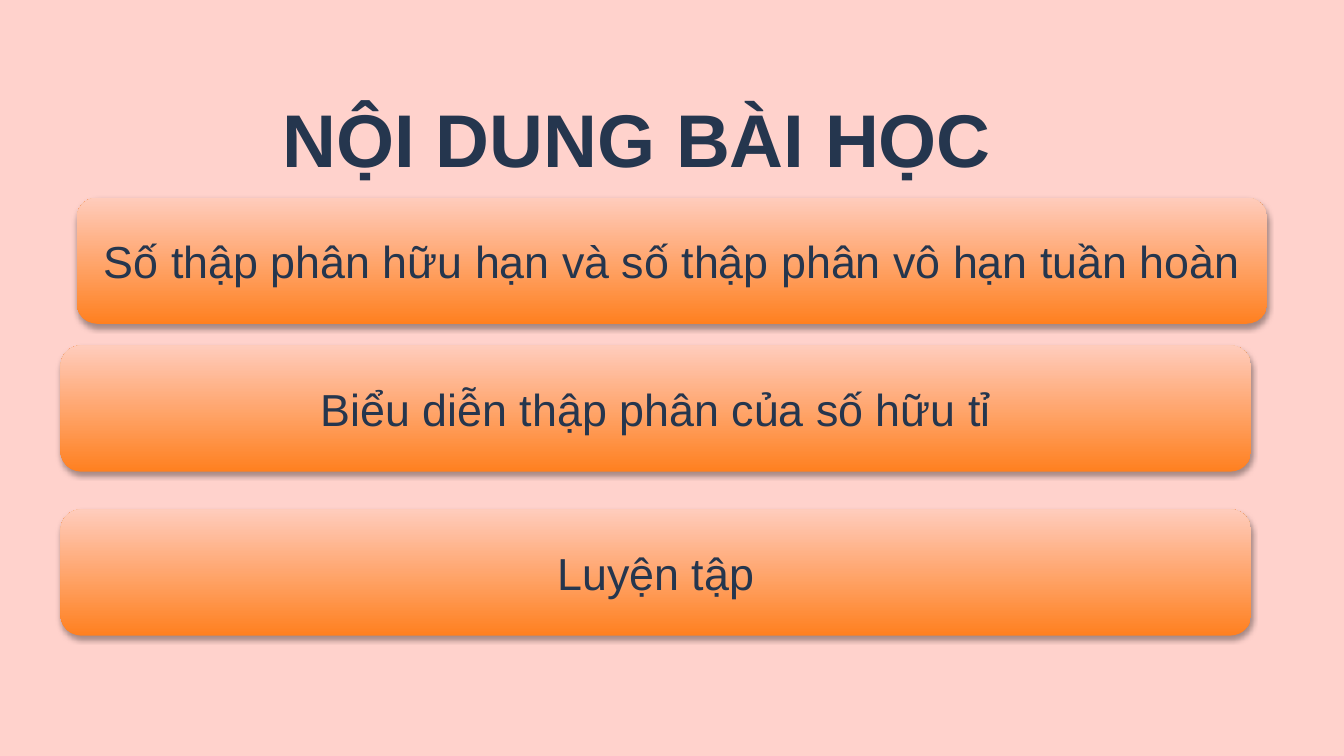
from lxml.etree import fromstring
from pptx import Presentation
from pptx.dml.color import RGBColor
from pptx.enum.shapes import MSO_SHAPE
from pptx.enum.text import MSO_ANCHOR, MSO_AUTO_SIZE, PP_ALIGN
from pptx.oxml.ns import nsdecls
from pptx.util import Inches, Pt

COLORS = {
    "background": "FFD2CC",
    "text": "25364E",
    "bottom": "FF8020",
    "top": "FFCCBC",
    "shadow": "000000",
}
SHADOW = (
    f'<a:effectLst {nsdecls("a")}>'
    '<a:outerShdw blurRad="40000" dist="23000" dir="5400000" rotWithShape="0">'
    f'<a:srgbClr val="{COLORS["shadow"]}"><a:alpha val="35000"/></a:srgbClr>'
    "</a:outerShdw></a:effectLst>"
)


def rgb(name):
    return RGBColor.from_string(COLORS[name])


def write_text(frame, text, font_format):
    para = frame.paragraphs[0]
    para.alignment = PP_ALIGN.CENTER
    span = para.add_run()
    span.text = text
    span.font.color.rgb = rgb("text")
    for name, value in font_format.items():
        setattr(span.font, name, value)


# Deck in 16:9, page and background
deck = Presentation()
deck.slide_width = Inches(10)
deck.slide_height = Inches(10) * 9 // 16
page = deck.slides.add_slide(deck.slide_layouts[5])
page.background.fill.solid()
page.background.fill.fore_color.rgb = rgb("background")

# Title
title = page.shapes.title
title.left, title.top = Inches(1.63), Inches(0.69)
title.width, title.height = Inches(6.22), Inches(0.67)
title_format = {
    "margin_left": 0,
    "margin_top": 0,
    "margin_right": 0,
    "margin_bottom": 0,
    "word_wrap": True,
    "vertical_anchor": MSO_ANCHOR.TOP,
    "auto_size": MSO_AUTO_SIZE.SHAPE_TO_FIT_TEXT,
}
for name, value in title_format.items():
    setattr(title.text_frame, name, value)
write_text(title.text_frame, "NỘI DUNG BÀI HỌC",
           {"name": "Arial", "size": Pt(40), "bold": True})

# Lesson parts: left, top, text
lesson_parts = [
    (0.57, 1.47, "Số thập phân hữu hạn và số thập phân vô hạn tuần hoàn"),
    (0.45, 2.57, "Biểu diễn thập phân của số hữu tỉ"),
    (0.45, 3.79, "Luyện tập"),
]
for left, top, text in lesson_parts:
    box = page.shapes.add_shape(MSO_SHAPE.ROUNDED_RECTANGLE, Inches(left),
                                Inches(top), Inches(8.86), Inches(0.94))
    box.line.fill.background()
    box.fill.gradient()
    box.fill.gradient_angle = 90
    for stop, color in zip(box.fill.gradient_stops, ("bottom", "top")):
        stop.color.rgb = rgb(color)
    box._element.spPr.append(fromstring(SHADOW))
    box.text_frame.word_wrap = True
    box.text_frame.vertical_anchor = MSO_ANCHOR.MIDDLE
    write_text(box.text_frame, text, {"name": "Arial", "size": Pt(24)})

deck.save("out.pptx")
